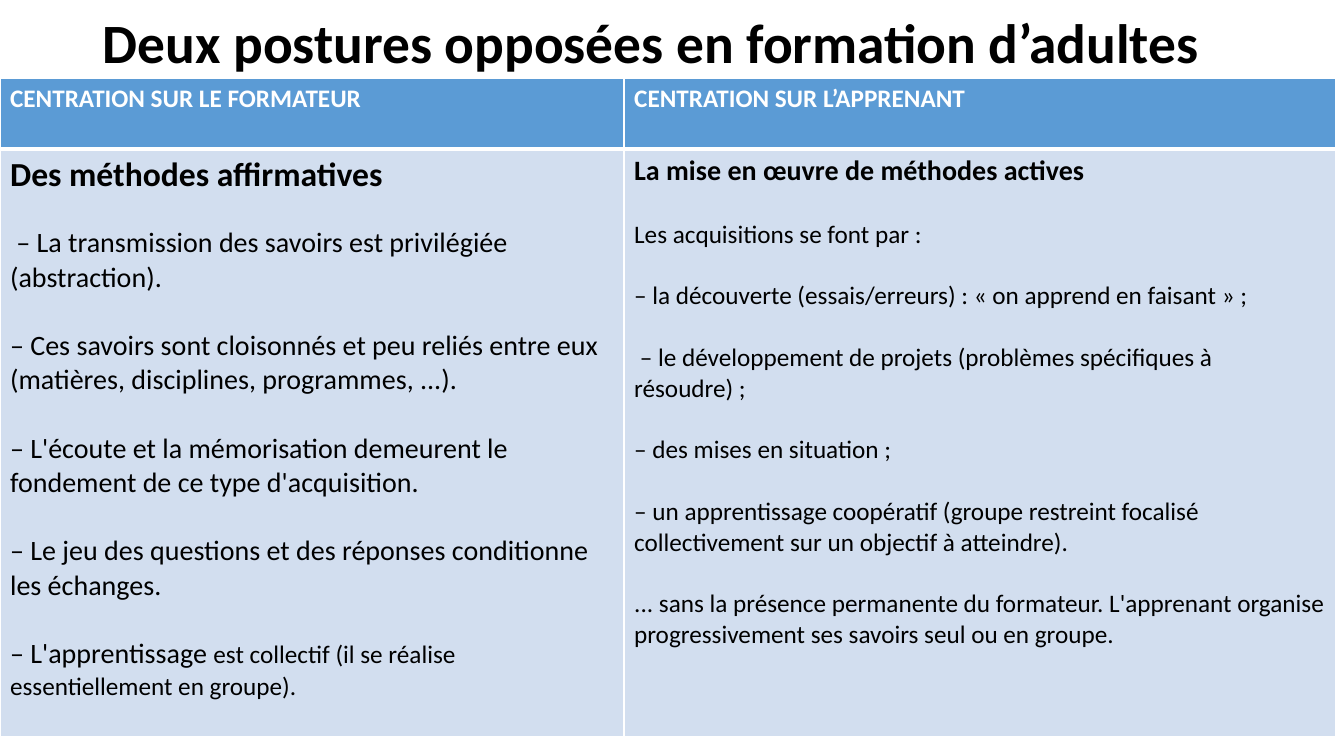
from dataclasses import dataclass

from lxml.etree import SubElement
from pptx import Presentation
from pptx.dml.color import RGBColor
from pptx.enum.text import MSO_ANCHOR, MSO_AUTO_SIZE, PP_ALIGN
from pptx.oxml.ns import qn
from pptx.util import Inches, Pt


@dataclass(frozen=True)
class Theme:
    font: str = "Calibri"
    black: str = "000000"
    white: str = "FFFFFF"
    header_fill: str = "5B9BD5"
    body_fill: str = "D2DEEF"
    title: float = 39.6
    heading: int = 24
    large: int = 20
    normal: int = 18
    thin: int = 1
    thick: int = 3


theme = Theme()


def add_span(para, words, size, color, bold=False):
    span = para.add_run()
    span.text = words
    span.font.name = theme.font
    span.font.size = Pt(size)
    span.font.bold = bold
    span.font.color.rgb = RGBColor.from_string(color)


def style_cell(cell, fill, top, bottom):
    """Give a cell its fill and white borders; top and bottom are widths in points."""
    properties = cell._tc.get_or_add_tcPr()
    sides = {"L": theme.thin, "R": theme.thin, "T": top, "B": bottom}
    for side, width in sides.items():
        line = SubElement(properties, qn(f"a:ln{side}"), w=str(Pt(width)))
        solid = SubElement(line, qn("a:solidFill"))
        SubElement(solid, qn("a:srgbClr"), val=theme.white)
    cell.fill.solid()
    cell.fill.fore_color.rgb = RGBColor.from_string(fill)


deck = Presentation()
deck.slide_width, deck.slide_height = Inches(13.33), Inches(7.5)
page = deck.slides.add_slide(deck.slide_layouts[5])

# Title
title = page.shapes.title
title.left, title.top = Inches(0.92), 0
title.width, title.height = Inches(11.5), Inches(0.9)
frame = title.text_frame
frame.auto_size = MSO_AUTO_SIZE.NONE
frame.vertical_anchor = MSO_ANCHOR.MIDDLE
para = frame.paragraphs[0]
para.alignment = PP_ALIGN.LEFT
para.line_spacing = 0.9
add_span(para, "Deux postures opposées en formation d’adultes",
         theme.title, theme.black, True)

# Each posture: header, gap between points, then paragraphs of (words, size, bold)
large, normal = theme.large, theme.normal
postures = [
    ("CENTRATION SUR LE FORMATEUR", large, [
        [("Des méthodes affirmatives", theme.heading, True)],
        [(" – La transmission des savoirs est privilégiée (abstraction).", large, False)],
        [("– Ces savoirs sont cloisonnés et peu reliés entre eux "
          "(matières, disciplines, programmes, ...).", large, False)],
        [("– L'écoute et la mémorisation demeurent le fondement "
          "de ce type d'acquisition.", large, False)],
        [("– Le jeu des questions et des réponses conditionne les échanges.", large, False)],
        [("– L'apprentissage ", large, False),
         ("est collectif (il se réalise essentiellement en groupe).", normal, False)],
    ]),
    ("CENTRATION SUR L’APPRENANT", normal, [
        [("La mise en œuvre de méthodes actives", large, True)],
        [("Les acquisitions se font par :", normal, False)],
        [("– la découverte (essais/erreurs) : « on apprend en faisant » ;", normal, False)],
        [(" – le développement de projets (problèmes spécifiques à résoudre) ;",
          normal, False)],
        [("– des mises en situation ;", normal, False)],
        [("– un apprentissage coopératif (groupe restreint focalisé "
          "collectivement sur un objectif à atteindre).", normal, False)],
        [("... sans la présence permanente du formateur. L'apprenant organise "
          "progressivement ses savoirs seul ou en groupe.", normal, False)],
    ]),
]

# Table
column_widths = [6.19, 7.06]
row_heights = [0.7, 5.83]
table = page.shapes.add_table(
    len(row_heights), len(column_widths), 0, Inches(0.78),
    Inches(sum(column_widths)), Inches(sum(row_heights))).table
for row, height in zip(table.rows, row_heights):
    row.height = Inches(height)

LINE_HEIGHT = 1.22
for column, (header, gap, points) in enumerate(postures):
    table.columns[column].width = Inches(column_widths[column])
    head, body = table.cell(0, column), table.cell(1, column)
    style_cell(head, theme.header_fill, theme.thin, theme.thick)
    style_cell(body, theme.body_fill, theme.thick, theme.thin)
    add_span(head.text_frame.paragraphs[0], header, normal, theme.white, True)

    for index, spans in enumerate(points):
        frame = body.text_frame
        para = frame.add_paragraph() if index else frame.paragraphs[0]
        if index:
            space = normal if index == 1 else gap
            para.space_before = Pt(round(space * LINE_HEIGHT, 1))
        for words, size, bold in spans:
            add_span(para, words, size, theme.black, bold)

deck.save("out.pptx")
